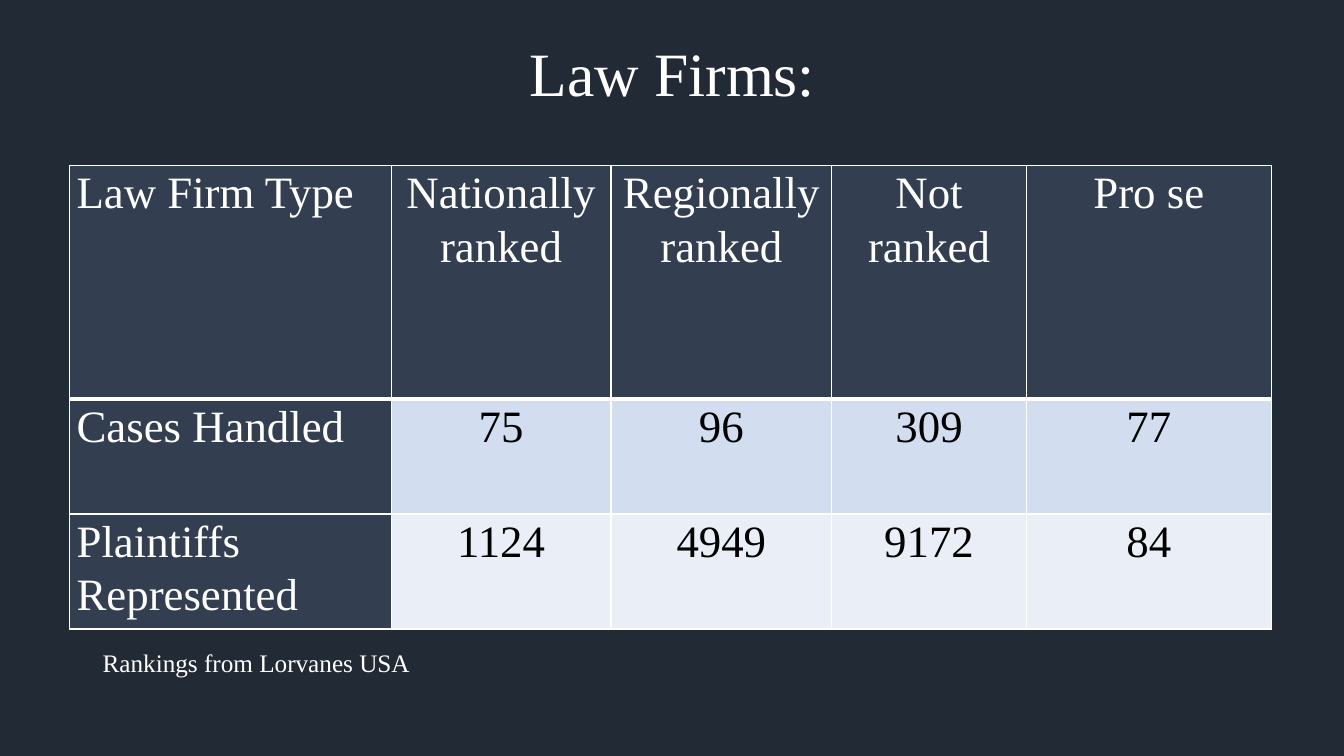
from dataclasses import dataclass

from lxml.etree import Element, SubElement
from pptx import Presentation
from pptx.dml.color import RGBColor
from pptx.enum.text import MSO_ANCHOR, PP_ALIGN
from pptx.oxml.ns import qn
from pptx.slide import Slide
from pptx.table import Table, _Cell
from pptx.text.text import _Paragraph
from pptx.util import Inches, Pt

FONT = "Times New Roman"
COLORS = {
    "background": "222A35",
    "header": "333F50",
    "cases": "D2DEEF",
    "plaintiffs": "EAEFF7",
    "light": "FFFFFF",
    "dark": "000000",
}
COLUMN_WIDTHS = (3.19, 2.18, 2.19, 1.93, 2.43)
HEADER_RULE = 3
THIN_RULE = 1


@dataclass
class Caption:
    text: str
    left: float
    top: float
    width: float
    height: float
    size: int
    align: PP_ALIGN
    anchor: MSO_ANCHOR
    spacing: float


@dataclass
class FirmRow:
    cells: tuple[str, ...]
    height: float
    fill: str
    ink: str
    top_rule: int
    bottom_rule: int


CAPTIONS = (
    Caption("Law Firms:", 0.92, 0, 11.5, 1.51, 44,
            PP_ALIGN.CENTER, MSO_ANCHOR.MIDDLE, 0.9),
    Caption("Rankings from Lorvanes USA", 0.92, 6.37, 8.57, 0.4, 18,
            PP_ALIGN.LEFT, MSO_ANCHOR.TOP, 1.0),
)
FIRM_ROWS = (
    FirmRow(("Law Firm Type", "Nationally ranked", "Regionally ranked",
             "Not ranked", "Pro se"),
            2.32, "header", "light", THIN_RULE, HEADER_RULE),
    FirmRow(("Cases Handled", "75", "96", "309", "77"),
            1.14, "cases", "dark", HEADER_RULE, THIN_RULE),
    FirmRow(("Plaintiffs Represented", "1124", "4949", "9172", "84"),
            1.14, "plaintiffs", "dark", THIN_RULE, THIN_RULE),
)


def color(name: str) -> RGBColor:
    return RGBColor.from_string(COLORS[name])


def write(para: _Paragraph, text: str, size: int, ink: str,
          align: PP_ALIGN, spacing: float) -> None:
    para.alignment = align
    para.line_spacing = spacing
    span = para.add_run()
    span.text = text
    span.font.name = FONT
    span.font.size = Pt(size)
    span.font.color.rgb = color(ink)


def add_caption(page: Slide, caption: Caption) -> None:
    box = page.shapes.add_textbox(Inches(caption.left), Inches(caption.top),
                                  Inches(caption.width), Inches(caption.height))
    frame = box.text_frame
    frame.word_wrap = True
    frame.vertical_anchor = caption.anchor
    write(frame.paragraphs[0], caption.text, caption.size, "light",
          caption.align, caption.spacing)


def set_borders(cell: _Cell, top: int, bottom: int) -> None:
    """Draw white cell borders; the line elements must precede the fill."""
    properties = cell._tc.get_or_add_tcPr()
    rules = (("L", THIN_RULE), ("R", THIN_RULE), ("T", top), ("B", bottom))
    for position, (side, width) in enumerate(rules):
        line = Element(qn(f"a:ln{side}"), w=str(Pt(width)))
        fill = SubElement(line, qn("a:solidFill"))
        SubElement(fill, qn("a:srgbClr"), val=COLORS["light"])
        properties.insert(position, line)


def fill_row(table: Table, index: int, row: FirmRow) -> None:
    table.rows[index].height = Inches(row.height)
    for column, text in enumerate(row.cells):
        is_label = column == 0
        cell = table.cell(index, column)
        cell.margin_left = cell.margin_right = Inches(0.07)
        cell.margin_top = cell.margin_bottom = 0
        cell.fill.solid()
        cell.fill.fore_color.rgb = color("header" if is_label else row.fill)
        set_borders(cell, row.top_rule, row.bottom_rule)
        write(cell.text_frame.paragraphs[0], text, 32,
              "light" if is_label else row.ink,
              PP_ALIGN.LEFT if is_label else PP_ALIGN.CENTER, 1.07)


def add_firm_table(page: Slide) -> None:
    table = page.shapes.add_table(
        len(FIRM_ROWS), len(COLUMN_WIDTHS), Inches(0.69), Inches(1.64),
        Inches(sum(COLUMN_WIDTHS)),
        Inches(sum(row.height for row in FIRM_ROWS))).table
    table.first_col = True
    for column, width in zip(table.columns, COLUMN_WIDTHS):
        column.width = Inches(width)
    for index, row in enumerate(FIRM_ROWS):
        fill_row(table, index, row)


def main() -> None:
    deck = Presentation()
    deck.slide_width = Inches(13.33)
    deck.slide_height = Inches(7.5)
    page = deck.slides.add_slide(deck.slide_layouts[6])
    page.background.fill.solid()
    page.background.fill.fore_color.rgb = color("background")
    title, source_note = CAPTIONS
    add_caption(page, title)
    add_firm_table(page)
    add_caption(page, source_note)
    deck.save("out.pptx")


if __name__ == "__main__":
    main()
